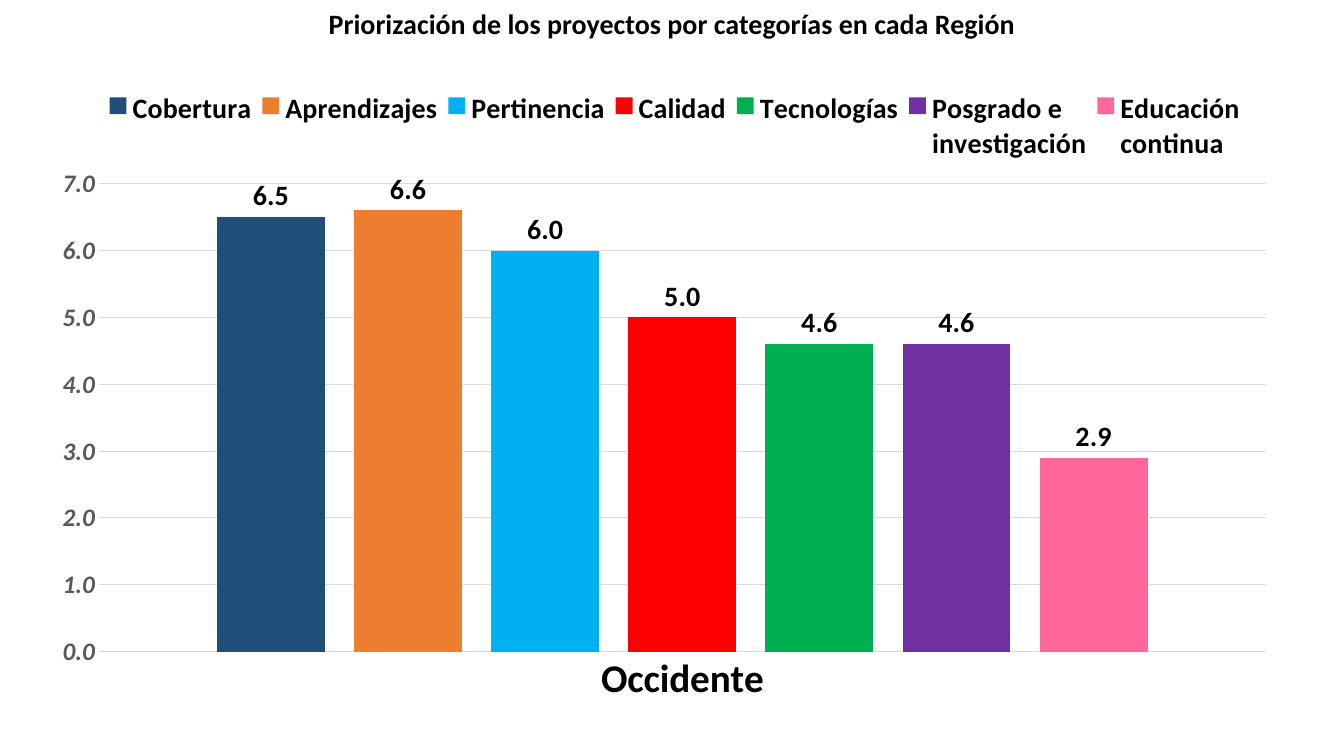
"""Build a slide with a column chart of project priorities in one region."""
import pptx
import pptx.chart.data
import pptx.dml.color
import pptx.enum.chart
import pptx.enum.text
import pptx.oxml
import pptx.oxml.ns
import pptx.util
from pptx.util import Cm

FONT = "Calibri"
COLORS = {
    "text": "000000",
    "scale": "595959",
    "grid": "D9D9D9",
    "coverage": "1F4E79",
    "learning": "ED7D31",
    "relevance": "00B0F0",
    "quality": "FF0000",
    "technology": "00B050",
    "postgraduate": "7030A0",
    "continuing": "FF6699",
}
PRIORITIES = [
    ("Cobertura", 6.5, "coverage"),
    ("Aprendizajes", 6.6, "learning"),
    ("Pertinencia", 6.0, "relevance"),
    ("Calidad", 5.0, "quality"),
    ("Tecnologías", 4.6, "technology"),
    ("Posgrado e \ninvestigación", 4.6, "postgraduate"),
    ("Educación \ncontinua", 2.9, "continuing"),
]


def rgb(name):
    """Return the named colour."""
    return pptx.dml.color.RGBColor.from_string(COLORS[name])


def set_font(font, size, color="text", bold=True, italic=False):
    """Format a font of the slide or the chart."""
    font.name = FONT
    font.size = pptx.util.Pt(size)
    font.bold = bold
    font.italic = italic
    font.color.rgb = rgb(color)


def add_text(slide, text, left, top, width, height, **font_format):
    """Add a centred, wrapping text box."""
    frame = slide.shapes.add_textbox(Cm(left), Cm(top), Cm(width), Cm(height)).text_frame
    frame.word_wrap = True
    frame.auto_size = pptx.enum.text.MSO_AUTO_SIZE.SHAPE_TO_FIT_TEXT
    paragraph = frame.paragraphs[0]
    paragraph.alignment = pptx.enum.text.PP_ALIGN.CENTER
    run = paragraph.add_run()
    run.text = text
    set_font(run.font, **font_format)


def set_layout(parent, index, x, y, w, h, inner=False):
    """Place the plot or the legend by fractions of the chart's size."""
    for old in parent.findall(pptx.oxml.ns.qn("c:layout")):
        parent.remove(old)
    target = '<c:layoutTarget val="inner"/>' if inner else ""
    modes = '<c:xMode val="edge"/><c:yMode val="edge"/>'
    extent = "".join(f'<c:{key} val="{value}"/>'
                     for key, value in zip("xywh", (x, y, w, h)))
    parent.insert(index, pptx.oxml.parse_xml(
        f'<c:layout {pptx.oxml.ns.nsdecls("c")}><c:manualLayout>'
        f'{target}{modes}{extent}</c:manualLayout></c:layout>'))


def format_axes(chart):
    """Format the region axis, the score axis and its gridlines."""
    no_tick = pptx.enum.chart.XL_TICK_MARK.NONE
    region, score = chart.category_axis, chart.value_axis
    for axis in (region, score):
        axis.major_tick_mark = axis.minor_tick_mark = no_tick
    set_font(region.tick_labels.font, 28)
    set_font(score.tick_labels.font, 18, "scale", italic=True)
    score.tick_labels.number_format = "0.0"
    score.tick_labels.number_format_is_linked = False
    score.minimum_scale, score.maximum_scale, score.major_unit = 0, 7, 1
    score.format.line.fill.background()
    for line in (region.format.line, score.major_gridlines.format.line):
        line.color.rgb = rgb("grid")
        line.width = pptx.util.Pt(0.75)


def format_columns(plot):
    """Colour each column and show its score above it."""
    plot.gap_width = 219
    plot.overlap = -27
    plot.vary_by_categories = False
    for column, (_, _, color) in zip(plot.series, PRIORITIES):
        column.format.fill.solid()
        column.format.fill.fore_color.rgb = rgb(color)
        labels = column.data_labels
        labels.show_value = True
        labels.number_format = "0.0"
        labels.number_format_is_linked = False
        labels.position = pptx.enum.chart.XL_LABEL_POSITION.OUTSIDE_END
        set_font(labels.font, 20)


def add_legend(chart):
    """Add the legend above the plot."""
    chart.has_legend = True
    legend = chart.legend
    legend.position = pptx.enum.chart.XL_LEGEND_POSITION.BOTTOM
    legend.include_in_layout = False
    set_font(legend.font, 20)
    set_layout(legend._element, 1, 0.03, 0.03, 0.95, 0.12)


def add_priority_chart(slide, left, top, width, height):
    """Add the column chart of priorities."""
    scores = pptx.chart.data.CategoryChartData(number_format="0.0")
    scores.categories = ["Occidente"]
    for name, score, _ in PRIORITIES:
        scores.add_series(name, [score])
    chart = slide.shapes.add_chart(
        pptx.enum.chart.XL_CHART_TYPE.COLUMN_CLUSTERED,
        Cm(left), Cm(top), Cm(width), Cm(height), scores).chart
    chart.has_title = False
    set_font(chart.font, 10, bold=False)
    format_axes(chart)
    format_columns(chart.plots[0])
    add_legend(chart)
    plot_area = chart._chartSpace.chart.plotArea
    set_layout(plot_area, 0, 0.03, 0.175, 0.957, 0.692, inner=True)


def main():
    """Build and save the slide."""
    deck = pptx.Presentation()
    deck.slide_width, deck.slide_height = Cm(33.87), Cm(19.05)
    slide = deck.slides.add_slide(deck.slide_layouts[6])
    add_priority_chart(slide, 1.57, 1.65, 30.73, 17.04)
    add_text(slide, "Priorización de los proyectos por categorías en cada Región",
             0, 0.03, 33.87, 1.11, size=20)
    deck.save("out.pptx")


if __name__ == "__main__":
    main()
